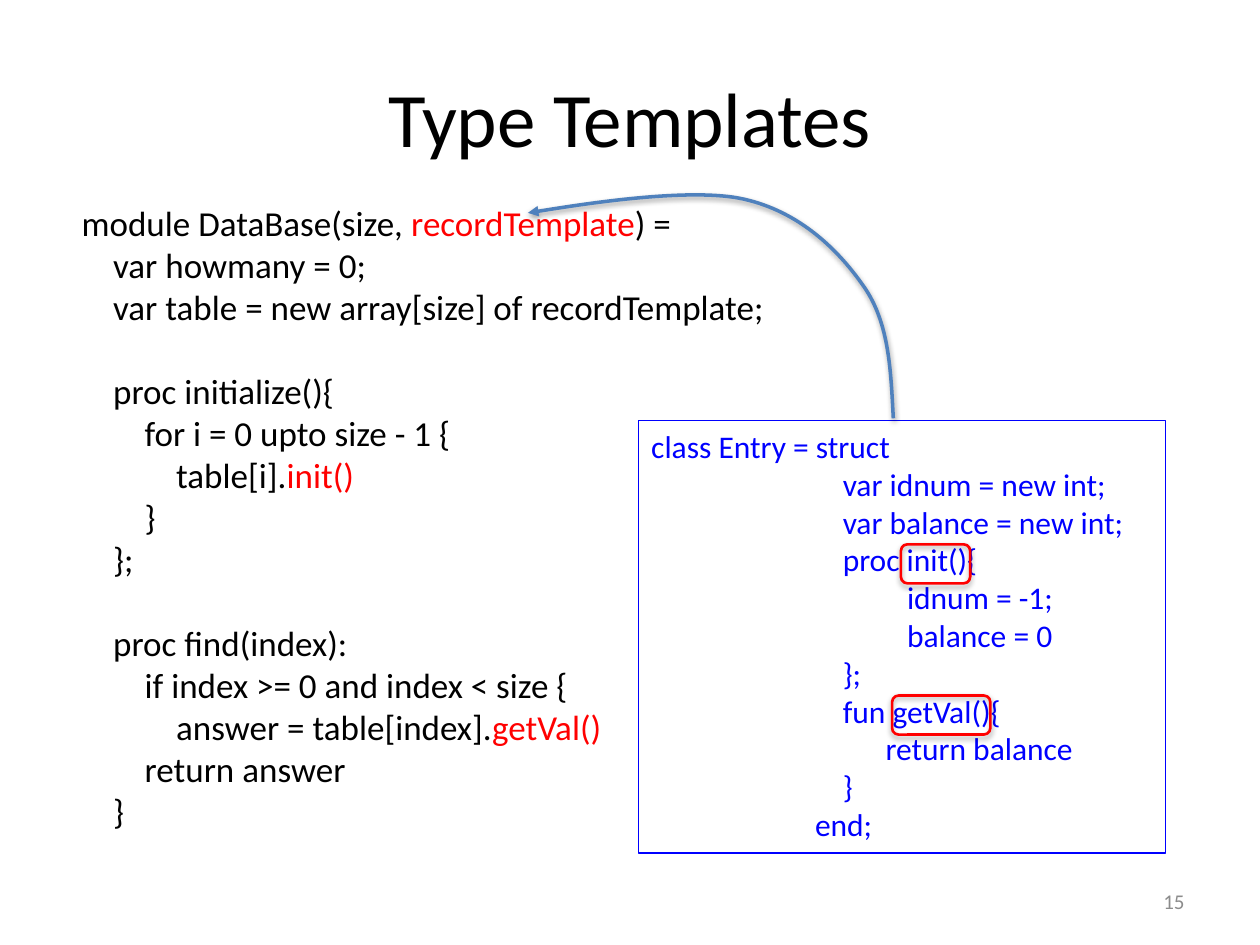
import pptx
import pptx.dml.color
import pptx.enum.shapes
import pptx.enum.text
import pptx.oxml
import pptx.oxml.ns
import pptx.util
from pptx.util import Inches

FONT = "Calibri"
BLACK, RED, BLUE, STEEL, GRAY = "000000", "FF0000", "0000FF", "4F81BD", "8C8C8C"
LEVEL = 0.25  # inches per indent level in the module listing

# Blocks of lines: indent level, then plain and highlighted text in turn
MODULE_BLOCKS = [
    [(0, "module DataBase(size, ", "recordTemplate", ") ="),
     (1, "var howmany = 0;"),
     (1, "var table = new array[size] of recordTemplate;")],
    [(1, "proc initialize(){"),
     (2, "for i = 0 upto size - 1 {"),
     (3, "table[i].", "init()"),
     (2, "}"),
     (1, "};")],
    [(1, "proc find(index):"),
     (2, "if index >= 0 and index < size {"),
     (3, "answer = table[index].", "getVal()"),
     (2, "return answer"),
     (1, "}")],
]

# Indent in inches, then text
CLASS_LINES = [
    (0, "class Entry = struct"),
    (1.52, "var idnum = new int;"),
    (1.52, "var balance = new int;"),
    (1.52, "proc init(){"),
    (2.03, "idnum = -1;"),
    (2.03, "balance = 0"),
    (1.52, "};"),
    (1.52, "fun getVal(){"),
    (1.86, "return balance"),
    (1.52, "}"),
    (1.3, "end;"),
]


def rgb(color):
    return pptx.dml.color.RGBColor.from_string(color)


def format_run(run, size, color):
    run.font.name = FONT
    run.font.size = pptx.util.Pt(size)
    run.font.color.rgb = rgb(color)


def set_outline(shape, color, width):
    shape.shadow.inherit = False
    shape.fill.background()
    shape.line.color.rgb = rgb(color)
    shape.line.width = pptx.util.Pt(width)


def add_shadow(shape, distance, opacity):
    """Cast a soft black shadow straight down."""
    effects = shape.element.spPr.find(pptx.oxml.ns.qn("a:effectLst"))
    effects.append(pptx.oxml.parse_xml(
        f'<a:outerShdw {pptx.oxml.ns.nsdecls("a")} blurRad="{pptx.util.Pt(3.1)}" '
        f'dist="{pptx.util.Pt(distance)}" dir="5400000" rotWithShape="0">'
        f'<a:srgbClr val="{BLACK}"><a:alpha val="{opacity * 1000}"/></a:srgbClr>'
        '</a:outerShdw>'))


def next_code_line(text_frame, indent):
    """Return an indented paragraph, reusing the empty first one."""
    paragraph = text_frame.paragraphs[0]
    if paragraph.runs:
        paragraph = text_frame.add_paragraph()
    paragraph.alignment = pptx.enum.text.PP_ALIGN.LEFT
    properties = paragraph._p.get_or_add_pPr()
    properties.set("marL", str(Inches(indent)))
    properties.set("indent", "0")
    return paragraph


def add_title(slide, left, top, width, height):
    title = slide.shapes.title
    title.left, title.top = Inches(left), Inches(top)
    title.width, title.height = Inches(width), Inches(height)
    title.text_frame.text = "Type Templates"
    title.text_frame.vertical_anchor = pptx.enum.text.MSO_ANCHOR.MIDDLE
    paragraph = title.text_frame.paragraphs[0]
    paragraph.alignment = pptx.enum.text.PP_ALIGN.CENTER
    format_run(paragraph.runs[0], 44, BLACK)


def add_slide_number(slide, left, top, width, height):
    box = slide.shapes.add_textbox(Inches(left), Inches(top), Inches(width), Inches(height))
    box.text_frame.word_wrap = True
    box.text_frame.vertical_anchor = pptx.enum.text.MSO_ANCHOR.MIDDLE
    box.text_frame.text = "15"
    paragraph = box.text_frame.paragraphs[0]
    paragraph.alignment = pptx.enum.text.PP_ALIGN.RIGHT
    format_run(paragraph.runs[0], 12, GRAY)


def add_module_listing(slide, left, top, width, height):
    box = slide.shapes.add_textbox(Inches(left), Inches(top), Inches(width), Inches(height))
    box.text_frame.word_wrap = True
    for block_number, block in enumerate(MODULE_BLOCKS):
        for line_number, (level, *segments) in enumerate(block):
            paragraph = next_code_line(box.text_frame, level * LEVEL)
            if block_number and line_number == 0:
                paragraph.space_before = pptx.util.Pt(24)
            for position, text in enumerate(segments):
                run = paragraph.add_run()
                run.text = text
                format_run(run, 20, RED if position % 2 else BLACK)


def add_class_listing(slide, left, top, width, height):
    """Add the framed class and ring the two procedures the module calls."""
    frame = slide.shapes.add_shape(
        pptx.enum.shapes.MSO_SHAPE.RECTANGLE,
        Inches(left), Inches(top), Inches(width), Inches(height))
    set_outline(frame, BLUE, 0.75)
    frame.text_frame.word_wrap = True
    frame.text_frame.vertical_anchor = pptx.enum.text.MSO_ANCHOR.TOP
    for indent, text in CLASS_LINES:
        paragraph = next_code_line(frame.text_frame, indent)
        paragraph.text = text
        format_run(paragraph.runs[0], 18, BLUE)


def add_call_rings(slide, left, top):
    """Ring init() and getVal() in the class listing placed at left, top."""
    for x, y, width in ((2.08, 0.98, 0.55), (2.01, 2.18, 0.78)):
        ring = slide.shapes.add_shape(
            pptx.enum.shapes.MSO_SHAPE.ROUNDED_RECTANGLE,
            Inches(left + x), Inches(top + y), Inches(width), Inches(0.31))
        set_outline(ring, RED, 1.5)
        add_shadow(ring, 1.8, 35)


def add_curved_arrow(slide, left, top):
    """Lead from the class listing to the recordTemplate parameter."""
    start = (2.9, 1.84)
    curve_points = [(2.88, 1.47), (2.87, 1.09), (2.67, 0.8),
                    (2.47, 0.51), (2.16, 0.2), (1.71, 0.1),
                    (1.26, 0), (0, 0.21), (0, 0.21)]
    builder = slide.shapes.build_freeform(Inches(start[0]), Inches(start[1]))
    builder.add_line_segments([(Inches(x), Inches(y)) for x, y in curve_points], close=False)
    arrow = builder.convert_to_shape(Inches(left), Inches(top))
    set_outline(arrow, STEEL, 2)
    add_shadow(arrow, 1.6, 38)

    # Every three straight segments become one Bezier curve.
    qn, nsdecls = pptx.oxml.ns.qn, pptx.oxml.ns.nsdecls("a")
    segments = list(arrow.element.iter(qn("a:lnTo")))
    for first in range(0, len(segments), 3):
        curve = pptx.oxml.parse_xml(f"<a:cubicBezTo {nsdecls}/>")
        segments[first].addprevious(curve)
        for segment in segments[first:first + 3]:
            curve.append(segment[0])
            segment.getparent().remove(segment)
    outline = arrow.element.spPr.find(qn("a:ln"))
    outline.append(pptx.oxml.parse_xml(f'<a:tailEnd {nsdecls} type="triangle"/>'))


def main():
    presentation = pptx.Presentation()
    presentation.slide_width, presentation.slide_height = Inches(10), Inches(7.5)
    slide = presentation.slides.add_slide(presentation.slide_layouts.get_by_name("Title Only"))
    add_title(slide, 0.5, 0.3, 9, 1.25)
    add_slide_number(slide, 7.17, 6.95, 2.33, 0.4)
    add_module_listing(slide, 0.55, 1.55, 8.94, 5.49)
    add_class_listing(slide, 5.07, 3.34, 4.18, 3.43)
    add_curved_arrow(slide, 4.19, 1.48)
    add_call_rings(slide, 5.07, 3.34)
    presentation.save("out.pptx")


if __name__ == "__main__":
    main()
